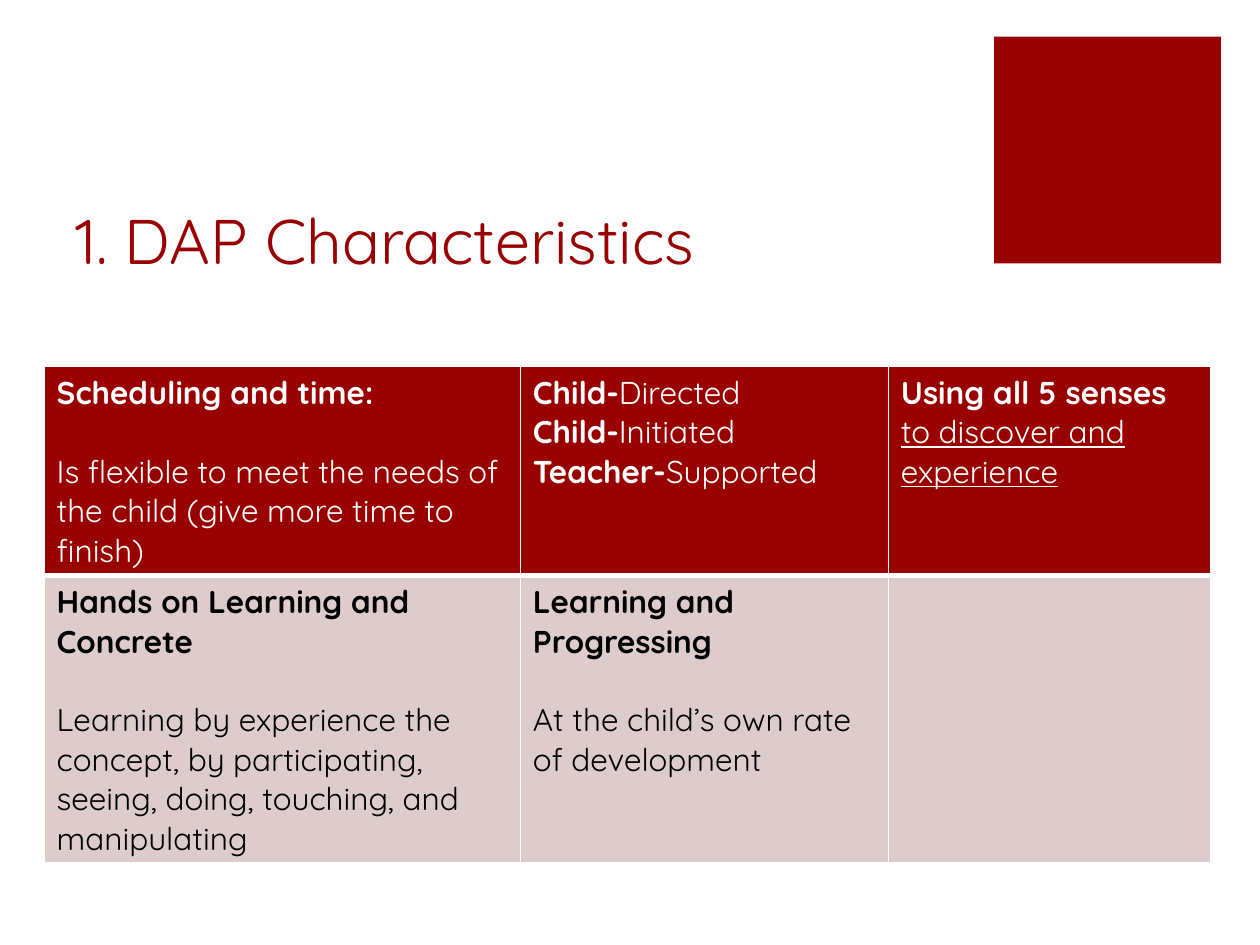
"""Build the DAP characteristics slide: title, accent square and a table of traits."""
from dataclasses import dataclass

from lxml import etree
from pptx import Presentation
from pptx.dml.color import RGBColor
from pptx.enum.shapes import MSO_SHAPE
from pptx.enum.text import MSO_ANCHOR
from pptx.oxml.ns import qn
from pptx.util import Inches, Pt

RECTANGLE = MSO_SHAPE.RECTANGLE
BOTTOM = MSO_ANCHOR.BOTTOM
BLANK_LAYOUT = 6


@dataclass(frozen=True)
class Theme:
    font: str = "Quicksand"
    accent: str = "990000"
    tint: str = "DECCCC"
    light: str = "FFFFFF"
    dark: str = "000000"
    title_size: float = 36
    body_size: float = 18
    heading_gap: float = 22.5
    thin_rule: float = 1
    thick_rule: float = 3


@dataclass(frozen=True)
class Phrase:
    text: str
    bold: bool = False
    underline: bool = False


@dataclass(frozen=True)
class Line:
    phrases: tuple[Phrase, ...]
    gap_after: float = 0


@dataclass(frozen=True)
class RowStyle:
    height: float
    fill: str
    ink: str
    top_rule: float
    bottom_rule: float


THEME = Theme()
COLUMN_WIDTHS = (3.78, 2.92, 2.56)
ROW_STYLES = (
    RowStyle(1.66, THEME.accent, THEME.light, THEME.thin_rule, THEME.thick_rule),
    RowStyle(2.28, THEME.tint, THEME.dark, THEME.thick_rule, THEME.thin_rule),
)


def topic(heading: str, detail: str) -> tuple[Line, ...]:
    """Return a bold heading set apart from its detail."""
    return (Line((Phrase(heading, bold=True),), THEME.heading_gap), Line((Phrase(detail),)))


def role(actor: str, action: str) -> Line:
    """Return one line pairing a bold actor with an action."""
    return Line((Phrase(actor, bold=True), Phrase(action)))


TRAITS = (
    (
        topic("Scheduling and time:",
              "Is flexible to meet the needs of the child (give more time to finish)"),
        (role("Child-", "Directed"), role("Child-", "Initiated"), role("Teacher-", "Supported")),
        (Line((Phrase("Using all 5 senses ", bold=True),
               Phrase("to discover and experience", underline=True))),),
    ),
    (
        topic("Hands on Learning and Concrete",
              "Learning by experience the concept, by participating, seeing, doing, "
              "touching, and manipulating"),
        topic("Learning and Progressing", "At the child’s own rate of development"),
        (),
    ),
)


def add_text(paragraph, text: str, *, size: float, color: str,
             bold: bool = False, underline: bool = False) -> None:
    """Append a formatted run to a paragraph."""
    run = paragraph.add_run()
    run.text = text
    run.font.name = THEME.font
    run.font.size = Pt(size)
    run.font.bold = bold
    run.font.underline = underline
    run.font.color.rgb = RGBColor.from_string(color)


def set_borders(cell, style: RowStyle) -> None:
    """Draw light rules on the four sides of a cell."""
    properties = cell._tc.get_or_add_tcPr()
    rules = (("a:lnL", THEME.thin_rule), ("a:lnR", THEME.thin_rule),
             ("a:lnT", style.top_rule), ("a:lnB", style.bottom_rule))
    for position, (side, width) in enumerate(rules):
        rule = etree.Element(qn(side), w=str(Pt(width)))
        fill = etree.SubElement(rule, qn("a:solidFill"))
        etree.SubElement(fill, qn("a:srgbClr"), val=THEME.light)
        properties.insert(position, rule)


def fill_cell(cell, lines: tuple[Line, ...], style: RowStyle) -> None:
    """Write the lines of a trait and style its cell."""
    cell.fill.solid()
    cell.fill.fore_color.rgb = RGBColor.from_string(style.fill)
    set_borders(cell, style)
    frame = cell.text_frame
    for index, line in enumerate(lines):
        paragraph = frame.add_paragraph() if index else frame.paragraphs[0]
        paragraph.space_after = Pt(line.gap_after)
        for phrase in line.phrases:
            add_text(paragraph, phrase.text, size=THEME.body_size, color=style.ink,
                     bold=phrase.bold, underline=phrase.underline)


def add_accent_square(slide) -> None:
    """Place the accent square in the top right corner."""
    side = Inches(1.8)
    square = slide.shapes.add_shape(RECTANGLE, Inches(7.89), Inches(0.29), side, side)
    square.shadow.inherit = False
    square.fill.solid()
    square.fill.fore_color.rgb = RGBColor.from_string(THEME.accent)
    square.line.fill.background()


def add_title(slide) -> None:
    """Place the slide title."""
    title = slide.shapes.add_textbox(Inches(0.5), Inches(1), Inches(7.12), Inches(1.25))
    title.text_frame.word_wrap = True
    title.text_frame.vertical_anchor = BOTTOM
    add_text(title.text_frame.paragraphs[0], "1. DAP Characteristics",
             size=THEME.title_size, color=THEME.accent)


def add_traits_table(slide) -> None:
    """Place the table of characteristics."""
    height = sum(style.height for style in ROW_STYLES)
    traits = slide.shapes.add_table(
        len(ROW_STYLES), len(COLUMN_WIDTHS), Inches(0.35), Inches(2.91),
        Inches(sum(COLUMN_WIDTHS)), Inches(height)).table
    for column, width in zip(traits.columns, COLUMN_WIDTHS):
        column.width = Inches(width)
    for row, style, row_traits in zip(traits.rows, ROW_STYLES, TRAITS):
        row.height = Inches(style.height)
        for cell, lines in zip(row.cells, row_traits):
            fill_cell(cell, lines, style)


def main() -> None:
    """Build and save the presentation."""
    presentation = Presentation()
    presentation.slide_width = Inches(10)
    presentation.slide_height = Inches(7.5)
    slide = presentation.slides.add_slide(presentation.slide_layouts[BLANK_LAYOUT])
    add_accent_square(slide)
    add_title(slide)
    add_traits_table(slide)
    presentation.save("out.pptx")


if __name__ == "__main__":
    main()
